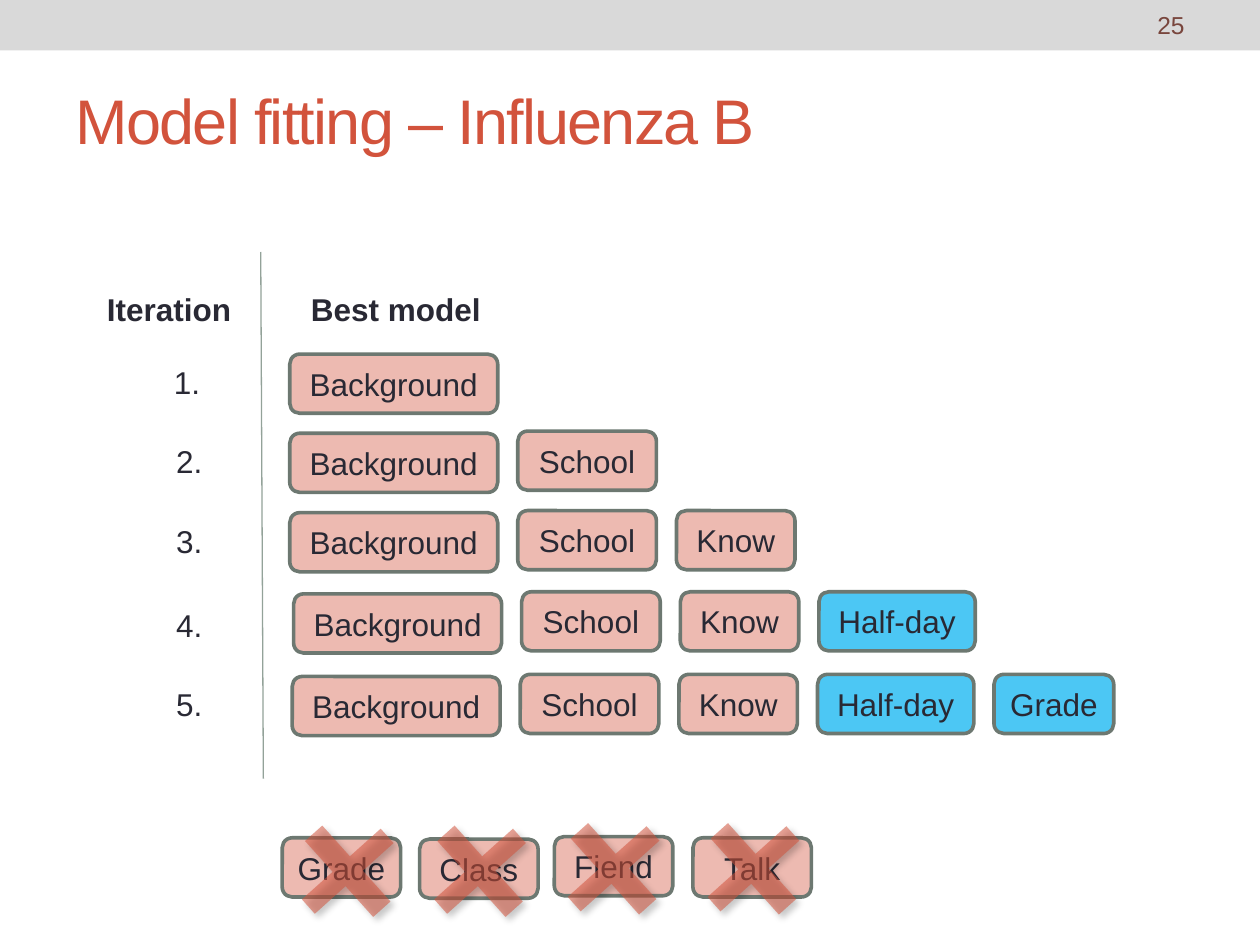
from dataclasses import dataclass

from lxml import etree
from pptx import Presentation
from pptx.dml.color import RGBColor
from pptx.enum.shapes import MSO_CONNECTOR, MSO_SHAPE
from pptx.enum.text import MSO_ANCHOR, PP_ALIGN
from pptx.oxml.ns import qn
from pptx.util import Pt

RECT = MSO_SHAPE.RECTANGLE
ROUND = MSO_SHAPE.ROUNDED_RECTANGLE
CROSS = MSO_SHAPE.CROSS
LINE = MSO_CONNECTOR.STRAIGHT
MIDDLE = MSO_ANCHOR.MIDDLE
TOP = MSO_ANCHOR.TOP
LEFT, CENTER, RIGHT = PP_ALIGN.LEFT, PP_ALIGN.CENTER, PP_ALIGN.RIGHT


@dataclass(frozen=True)
class Theme:
    """Colours, font and type sizes of the slide."""
    font: str = "Arial"
    head: int = 36
    body: int = 18
    small: int = 14
    ink: str = "292934"
    red: str = "D2533C"
    brown: str = "79463D"
    pink: str = "EDBAB1"
    blue: str = "00B0F0"
    edge: str = "6D7871"
    rule: str = "93A299"
    bar: str = "D9D9D9"


THEME = Theme()
TERMS = [("Background", 165.6, 118.8, 1.2), ("School", 295.9, 79.2, 0),
         ("Know", 386.6, 67.7, 0), ("Half-day", 465.8, 89.3, 0),
         ("Grade", 566.6, 68.4, 0)]
STEPS = [(0, 201.2, 92.2, 203.8), (0, 246.4, 93.6, 249.1),
         (0, 291.8, 93.6, 294.5), (2.2, 338.2, 93.6, 342.7),
         (1.4, 385.4, 93.6, 388.1)]
DROPPED = [("Grade", 161.3, 478.8, 168.5, 468.7),
           ("Class", 239.8, 479.5, 244.1, 468.7),
           ("Fiend", 316.8, 478.1, 320.4, 467.3),
           ("Talk", 396, 478.8, 400.3, 467.3)]
CHOSEN = 3
HIGH = 33.8


def points(*nums):
    """Return the numbers as lengths in points."""
    return [Pt(num) for num in nums]


def write(shape, text, size, color, align=LEFT, anchor=MIDDLE, bold=False):
    """Put one line of styled text in a shape."""
    frame = shape.text_frame
    frame.text = text
    frame.word_wrap = True
    frame.vertical_anchor = anchor
    para = frame.paragraphs[0]
    para.alignment = align
    font = para.runs[0].font
    font.name, font.size, font.bold = THEME.font, Pt(size), bold
    font.color.rgb = RGBColor.from_string(color)


def add_title(slide, text):
    """Place and style the title."""
    title = slide.shapes.title
    title.left, title.top, title.width, title.height = points(36, 41.8, 648, 52.6)
    write(title, text, THEME.head, THEME.red)
    run = title.text_frame.paragraphs[0].runs[0]
    run.font._element.set("spc", "-100")


def add_block(slide, kind, box, color, alpha=100):
    """Add a filled shape with no line or shadow."""
    shape = slide.shapes.add_shape(kind, *points(*box))
    shape.shadow.inherit = False
    shape.fill.solid()
    shape.fill.fore_color.rgb = RGBColor.from_string(color)
    shape.line.fill.background()
    if alpha < 100:
        tint = shape._element.spPr.find(qn("a:solidFill"))[0]
        etree.SubElement(tint, qn("a:alpha"), val=str(alpha * 1000))
    return shape


def add_term(slide, text, box, color=THEME.pink, alpha=100):
    """Add a rounded box that names a model term."""
    shape = add_block(slide, ROUND, box, color, alpha)
    shape.line.color.rgb = RGBColor.from_string(THEME.edge)
    shape.line.width = Pt(2.08)
    write(shape, text, THEME.body, THEME.ink, CENTER)


def add_cross(slide, left, top):
    """Add a tilted, see-through cross with a soft shadow."""
    shape = add_block(slide, CROSS, (left, top, 60.5, 58.3), THEME.red, 54)
    shape.adjustments[0] = 0.405
    shape.rotation = 318.1
    effects = shape._element.spPr.find(qn("a:effectLst"))
    shade = etree.SubElement(effects, qn("a:outerShdw"), blurRad=str(Pt(4)),
                             dist=str(Pt(3)), dir="2700000", rotWithShape="0")
    tint = etree.SubElement(shade, qn("a:srgbClr"), val="000000")
    etree.SubElement(tint, qn("a:alpha"), val="40000")


def add_label(slide, text, box, bold=False):
    """Add a plain body label."""
    label = slide.shapes.add_textbox(*points(*box))
    write(label, text, THEME.body, THEME.ink, anchor=TOP, bold=bold)


def add_rule(slide, *ends):
    """Add the thin line between the columns."""
    rule = slide.shapes.add_connector(LINE, *points(*ends))
    rule.line.color.rgb = RGBColor.from_string(THEME.rule)
    rule.line.width = Pt(0.75)
    etree.SubElement(rule._element.spPr, qn("a:effectLst"))


def add_step(slide, count, shift, top, left, base):
    """Add one numbered row of model terms."""
    add_label(slide, f"{count}.", (left, base, 39.6, 28.8))
    for spot, (text, start, width, drop) in enumerate(TERMS[:count]):
        look = (THEME.pink, 100) if spot < CHOSEN else (THEME.blue, 70)
        add_term(slide, text, (start + shift, top + drop, width, HIGH), *look)


def main():
    """Build and save the slide."""
    deck = Presentation()
    deck.slide_width, deck.slide_height = points(720, 540)
    slide = deck.slides.add_slide(deck.slide_layouts[5])
    add_block(slide, RECT, (0, 0, 720, 28.8), THEME.bar)
    add_title(slide, "Model fitting – Influenza B")
    page = slide.shapes.add_textbox(*points(599.8, 1.4, 84.2, 25.9))
    write(page, "25", THEME.small, THEME.brown, RIGHT)
    add_label(slide, "Iteration", (54, 162, 87.8, 28.8), True)
    add_label(slide, "Best model", (170.6, 162, 290.9, 28.8), True)
    add_rule(slide, 149, 144, 150.5, 445)
    for count, step in enumerate(STEPS, 1):
        add_step(slide, count, *step)
    for text, left, top, *mark in DROPPED:
        add_term(slide, text, (left, top, 67.7, HIGH))
        add_cross(slide, *mark)
    deck.save("out.pptx")


if __name__ == "__main__":
    main()
